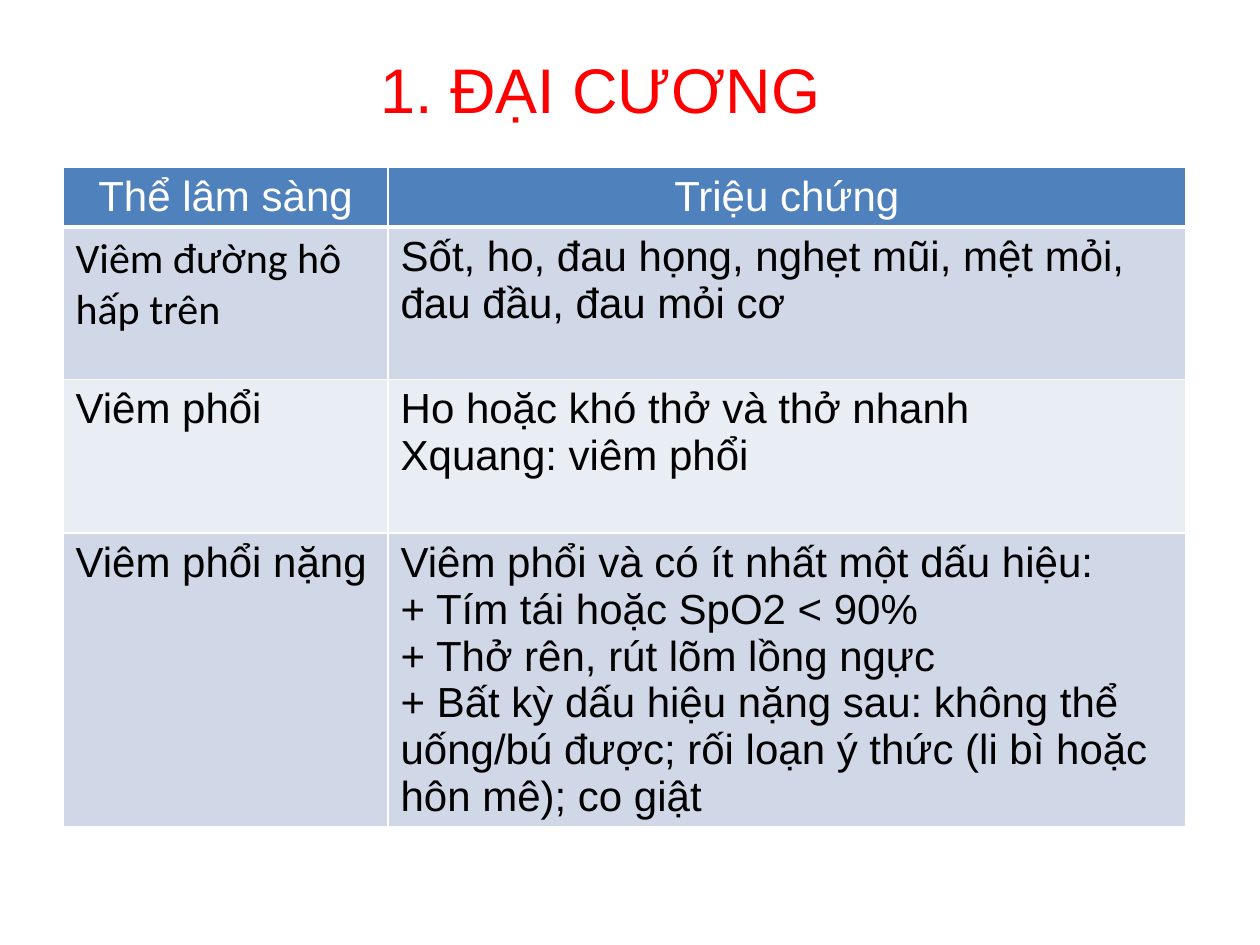
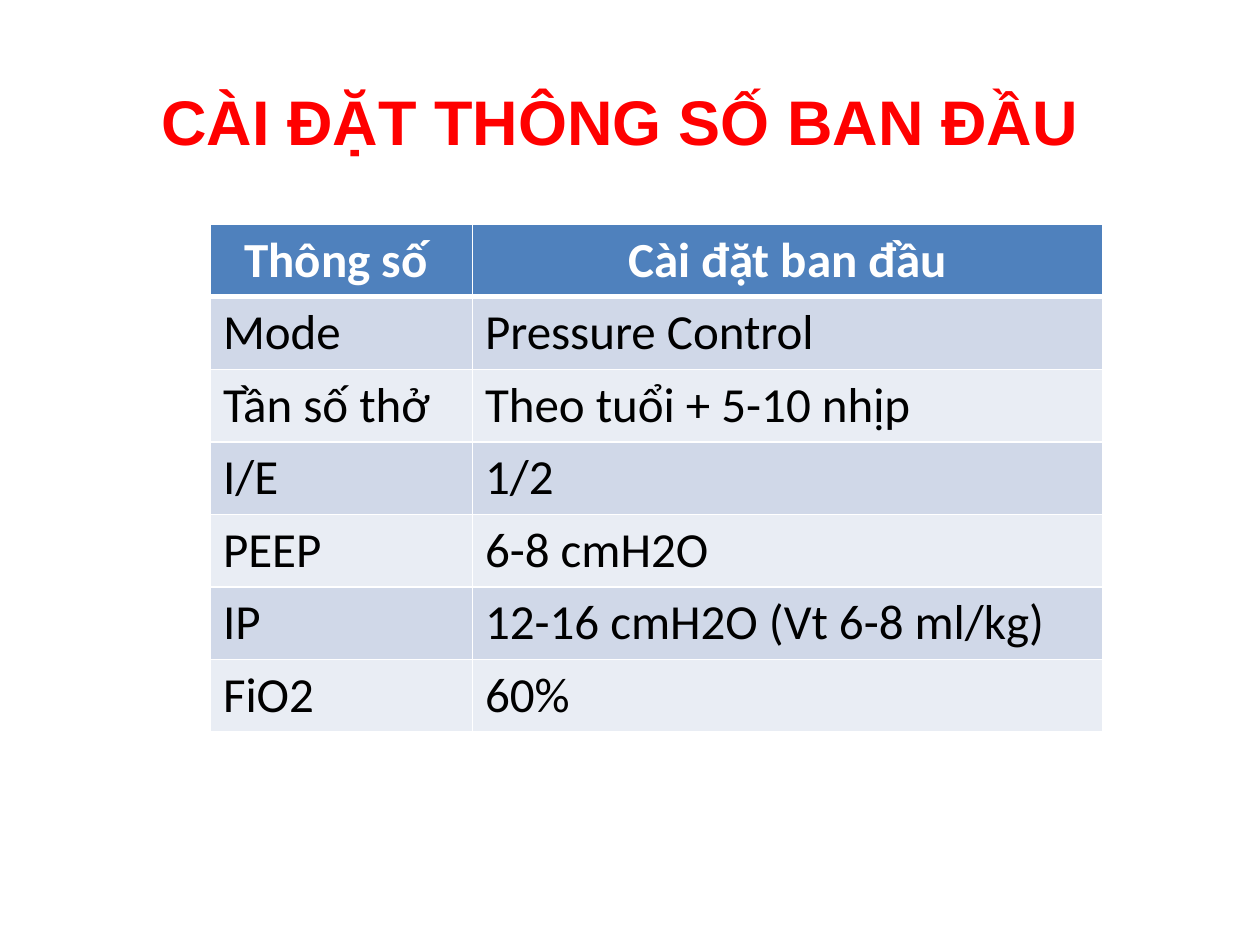
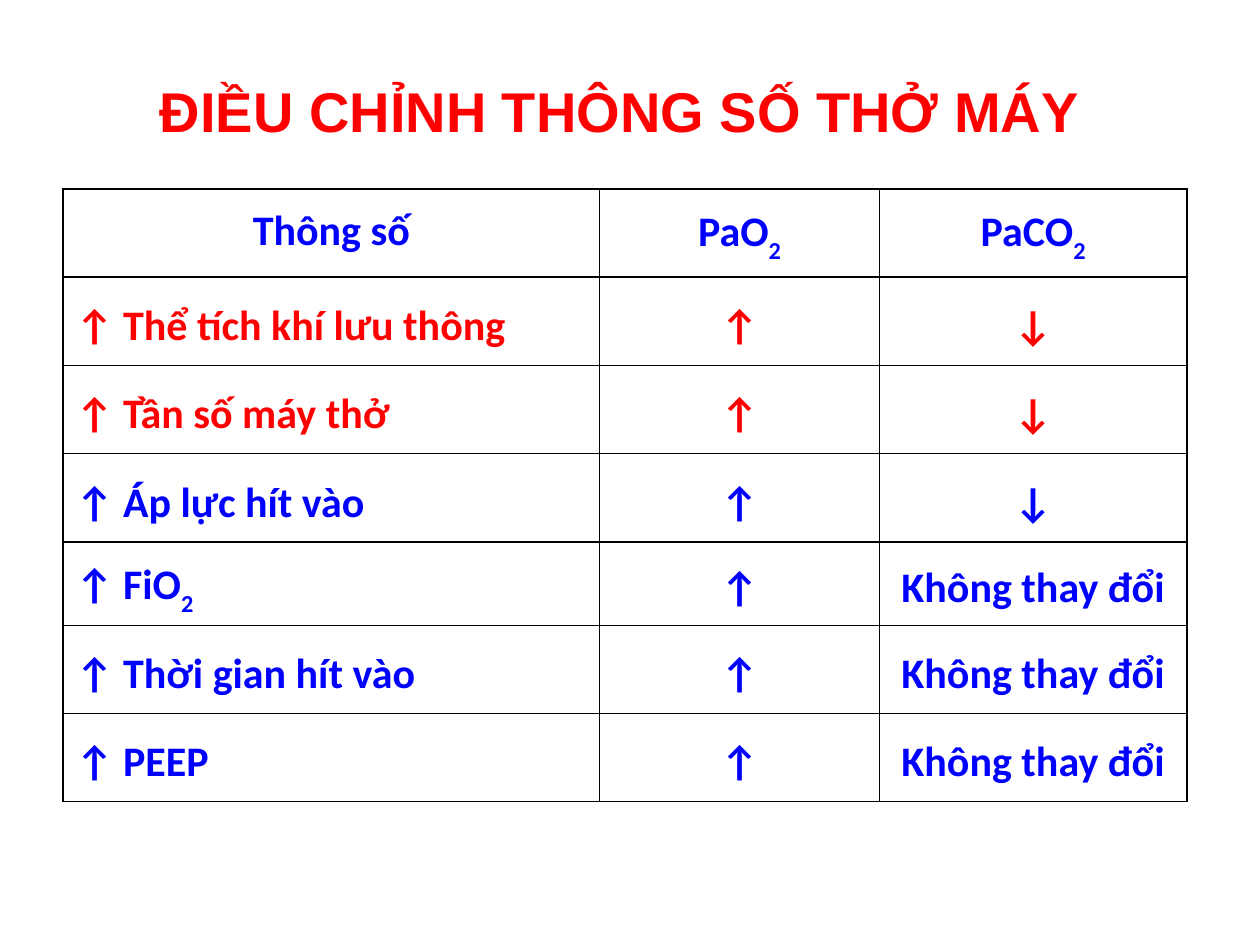
from lxml import etree
from pptx import Presentation
from pptx.dml.color import RGBColor
from pptx.enum.text import MSO_ANCHOR, PP_ALIGN
from pptx.oxml.ns import qn
from pptx.util import Inches, Pt

CENTER, LEFT, JUSTIFY = PP_ALIGN.CENTER, PP_ALIGN.LEFT, PP_ALIGN.JUSTIFY
TOP, MIDDLE = MSO_ANCHOR.TOP, MSO_ANCHOR.MIDDLE

RED = RGBColor(0xFF, 0x00, 0x00)
BLUE = RGBColor(0x00, 0x00, 0xFF)
BLACK = RGBColor(0x00, 0x00, 0x00)
WHITE = RGBColor(0xFF, 0xFF, 0xFF)
HEADER_FILL = RGBColor(0x4F, 0x81, 0xBD)
BANDS = [RGBColor(0xE9, 0xED, 0xF4), RGBColor(0xD0, 0xD8, 0xE8)]

TITLE_ONLY = 5
INDENT = Inches(0.38)

SYMPTOMS = [
    ("Thể lâm sàng", "Triệu chứng"),
    ("Viêm đường hô hấp trên",
     "Sốt, ho, đau họng, nghẹt mũi, mệt mỏi, đau đầu, đau mỏi cơ"),
    ("Viêm phổi", "Ho hoặc khó thở và thở nhanh\nXquang: viêm phổi"),
    ("Viêm phổi nặng",
     "Viêm phổi và có ít nhất một dấu hiệu:\n"
     "+ Tím tái hoặc SpO2 < 90%\n"
     "+ Thở rên, rút lõm lồng ngực\n"
     "+ Bất kỳ dấu hiệu nặng sau: không thể uống/bú được; "
     "rối loạn ý thức (li bì hoặc hôn mê); co giật"),
]
SETTINGS = [
    ("Thông số ", "Cài đặt ban đầu"),
    ("Mode", "Pressure Control"),
    ("Tần số thở", "Theo tuổi + 5-10 nhịp"),
    ("I/E", "1/2"),
    ("PEEP", "6-8 cmH2O"),
    ("IP", "12-16 cmH2O (Vt 6-8 ml/kg)"),
    ("FiO2", "60%"),
]
ADJUSTMENTS = [
    ("Thông số", "PaO_2", "PaCO_2"),
    ("↑ Thể tích khí lưu thông", "↑", "↓"),
    ("↑ Tần số máy thở", "↑", "↓"),
    ("↑ Áp lực hít vào ", "↑", "↓"),
    ("↑ FiO_2", "↑", "Không thay đổi"),
    ("↑ Thời gian hít vào", "↑", "Không thay đổi"),
    ("↑ PEEP", "↑", "Không thay đổi"),
]


def format_runs(tf, font, size, color, bold, align):
    """Give every paragraph and run of a text frame one look."""
    for p in tf.paragraphs:
        p.alignment = align
        for r in p.runs:
            r.font.name, r.font.size, r.font.bold = font, Pt(size), bold
            r.font.color.rgb = color


def add_titled_slide(prs, text, box, size=36, bold=True):
    """Add a slide with a red title in the given box."""
    s = prs.slides.add_slide(prs.slide_layouts[TITLE_ONLY])
    title = s.shapes.title
    title.left, title.top, title.width, title.height = map(Inches, box)
    title.text_frame.text = text
    title.text_frame.vertical_anchor = MIDDLE
    format_runs(title.text_frame, "Arial", size, RED, bold, CENTER)
    return s


def set_borders(cell, color, top=1, bottom=1):
    """Draw the four borders of a cell, widths in points."""
    tcPr = cell._tc.get_or_add_tcPr()
    for side, width in (("L", 1), ("R", 1), ("T", top), ("B", bottom)):
        ln = etree.SubElement(tcPr, qn(f"a:ln{side}"), w=str(Pt(width)))
        fill = etree.SubElement(ln, qn("a:solidFill"))
        etree.SubElement(fill, qn("a:srgbClr"), val=str(color))


def fill_cell(cell, text, fill):
    """Colour a cell and write its text, with any part after _ as subscript."""
    cell.fill.solid()
    cell.fill.fore_color.rgb = fill
    base, _, sub = text.partition("_")
    cell.text_frame.text = base
    if sub:
        r = cell.text_frame.paragraphs[-1].add_run()
        r.text = sub
        r._r.get_or_add_rPr().set("baseline", "-30000")


def add_grid(s, rows, left, top, widths, heights):
    """Add an empty table with the given column widths and row heights."""
    table = s.shapes.add_table(len(rows), len(widths), Inches(left), Inches(top),
                               Inches(sum(widths)), Inches(sum(heights))).table
    for column, width in zip(table.columns, widths):
        column.width = Inches(width)
    for row, height in zip(table.rows, heights):
        row.height = Inches(height)
    return table


def add_banded_table(s, rows, left, top, widths, heights, size, font, header_bold):
    """Add a table with a blue header and alternating bands."""
    table = add_grid(s, rows, left, top, widths, heights)
    for i, row in enumerate(rows):
        header = i == 0
        for j, text in enumerate(row):
            cell = table.cell(i, j)
            set_borders(cell, WHITE, 3 if i == 1 else 1, 3 if header else 1)
            fill_cell(cell, text, HEADER_FILL if header else BANDS[i % 2])
            format_runs(cell.text_frame, font, size, WHITE if header else BLACK,
                        header and header_bold, CENTER if header else LEFT)
    return table


def add_ruled_table(s, rows, left, top, widths, heights, red_rows):
    """Add a white table with black rules and bold coloured text."""
    table = add_grid(s, rows, left, top, widths, heights)
    for i, row in enumerate(rows):
        for j, text in enumerate(row):
            cell = table.cell(i, j)
            set_borders(cell, BLACK)
            fill_cell(cell, text, WHITE)
            cell.vertical_anchor = MIDDLE if i else TOP
            format_runs(cell.text_frame, "Calibri", 24, RED if i in red_rows else BLUE,
                        True, JUSTIFY if i and j == 0 else CENTER)
            p = cell.text_frame.paragraphs[0]
            p.line_spacing = 1.2
            pPr = p._p.get_or_add_pPr()
            pPr.set("marL", str(INDENT))
            pPr.set("indent", str(-INDENT))


def main():
    """Build the three slides and save them."""
    prs = Presentation()
    prs.slide_width, prs.slide_height = Inches(10), Inches(7.5)

    s = add_titled_slide(prs, "1. ĐẠI CƯƠNG", (0.25, 0.08, 9.03, 1.25), bold=False)
    table = add_banded_table(s, SYMPTOMS, 0.5, 1.33, [2.58, 6.33],
                             [0.47, 1.21, 1.22, 2.33], 24, "Arial", False)
    table.cell(1, 0).text_frame.paragraphs[0].runs[0].font.name = "Calibri"

    s = add_titled_slide(prs, "CÀI ĐẶT THÔNG SỐ BAN ĐẦU", (0.42, 0.33, 9, 1.25))
    add_banded_table(s, SETTINGS, 1.67, 1.78, [2.08, 5], [0.57] * len(SETTINGS),
                     28, "Calibri", True)

    s = add_titled_slide(prs, "ĐIỀU CHỈNH THÔNG SỐ THỞ MÁY", (0.42, 0.25, 9, 1.25), 32)
    add_ruled_table(s, ADJUSTMENTS, 0.5, 1.5, [4.26, 2.22, 2.44],
                    [0.7] * 4 + [0.65] + [0.7] * 2, red_rows=(1, 2))

    prs.save("out.pptx")


if __name__ == "__main__":
    main()
